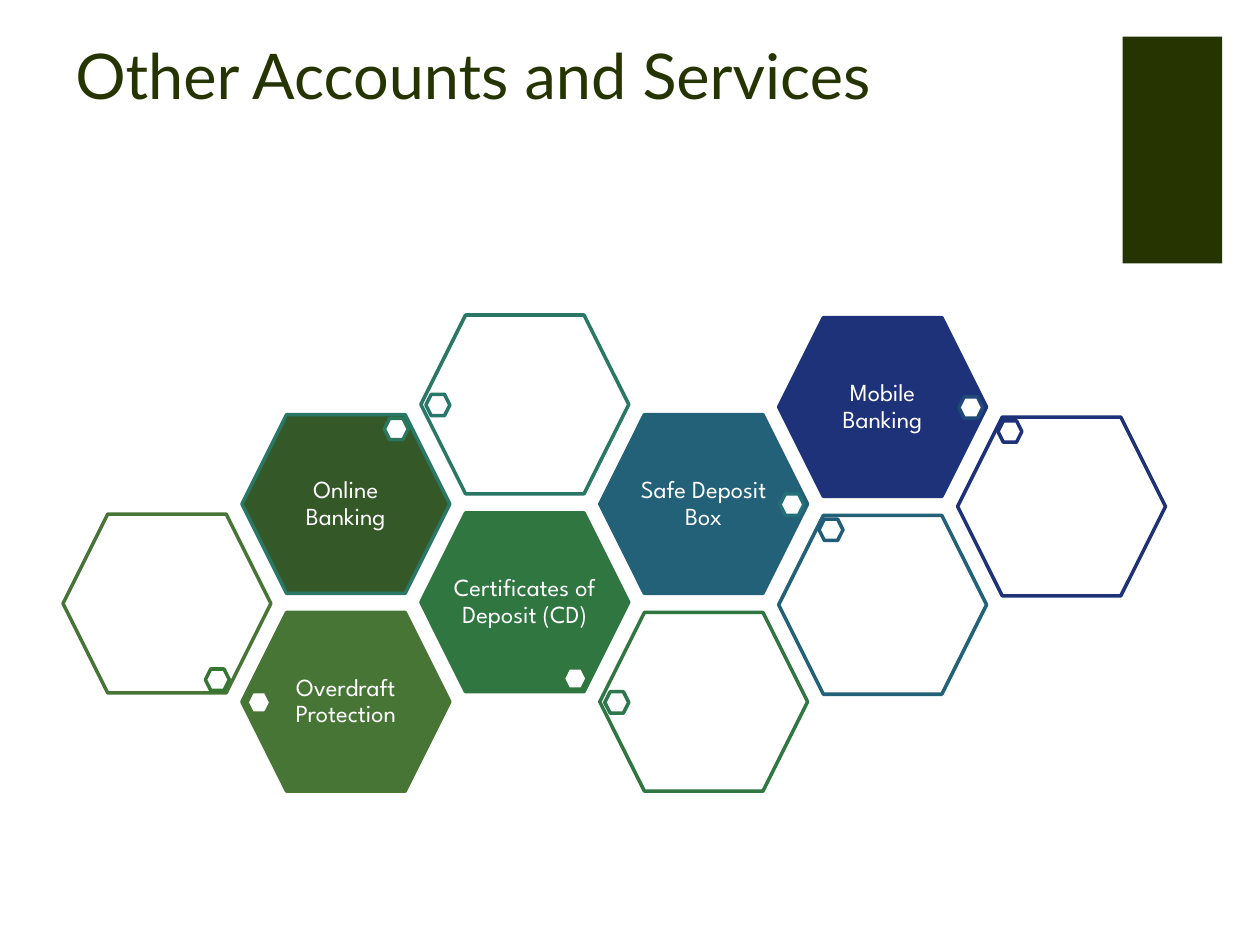
from pptx import Presentation
from pptx.dml.color import RGBColor
from pptx.enum.shapes import MSO_SHAPE
from pptx.enum.text import MSO_ANCHOR, PP_ALIGN
from pptx.oxml.xmlchemy import OxmlElement
from pptx.util import Inches, Pt

RECTANGLE, HEXAGON = MSO_SHAPE.RECTANGLE, MSO_SHAPE.HEXAGON
BOTTOM, MIDDLE = MSO_ANCHOR.BOTTOM, MSO_ANCHOR.MIDDLE
CENTER = PP_ALIGN.CENTER

WHITE = RGBColor(0xFF, 0xFF, 0xFF)
DARK_OLIVE = RGBColor(0x26, 0x34, 0x01)
OLIVE = RGBColor(0x46, 0x75, 0x36)
GREEN = RGBColor(0x2F, 0x76, 0x41)
FOREST = RGBColor(0x34, 0x58, 0x28)
TEAL = RGBColor(0x29, 0x77, 0x64)
BLUE = RGBColor(0x23, 0x61, 0x78)
NAVY = RGBColor(0x1D, 0x32, 0x78)
MOSS_DOT = RGBColor(0x35, 0x76, 0x33)
GREEN_DOT = RGBColor(0x30, 0x76, 0x3E)
JADE_DOT = RGBColor(0x2D, 0x77, 0x4C)
SEA_DOT = RGBColor(0x2A, 0x77, 0x5C)
TEAL_DOT = RGBColor(0x27, 0x77, 0x6D)
CYAN_DOT = RGBColor(0x25, 0x70, 0x78)
BLUE_DOT = RGBColor(0x22, 0x5C, 0x78)
INDIGO_DOT = RGBColor(0x20, 0x48, 0x78)

TITLE = "Other Accounts and Services"
CELL_WIDTH, CELL_HEIGHT = 1.65, 1.42
DOT_WIDTH, DOT_HEIGHT = 0.19, 0.17
GRID_LEFT, COLUMN_STEP, ROW_STEP = 0.5, 1.42, 1.57
COLUMN_TOPS = [4.08, 3.29, 2.5, 3.29, 2.52, 3.31]
DOT_OFFSETS = {
    "left": (0.04, 0.63),
    "right": (1.43, 0.63),
    "upper left": (0.32, 0.03),
    "upper right": (1.13, 0.03),
    "lower right": (1.13, 1.23),
}

# column, row, label, fill, line, dot corner, dot line
CELLS = [
    (1, 1, "Overdraft Protection", OLIVE, OLIVE, "left", OLIVE),
    (0, 0, None, WHITE, OLIVE, "lower right", MOSS_DOT),
    (2, 1, "Certificates of Deposit (CD)", GREEN, GREEN, "lower right", GREEN_DOT),
    (3, 1, None, WHITE, GREEN, "left", JADE_DOT),
    (1, 0, "Online Banking", FOREST, TEAL, "upper right", SEA_DOT),
    (2, 0, None, WHITE, TEAL, "left", TEAL_DOT),
    (3, 0, "Safe Deposit Box", BLUE, BLUE, "right", CYAN_DOT),
    (4, 1, None, WHITE, BLUE, "upper left", BLUE_DOT),
    (4, 0, "Mobile Banking", NAVY, NAVY, "right", INDIGO_DOT),
    (5, 0, None, WHITE, NAVY, "upper left", NAVY),
]


def add_filled(page, kind, left, top, width, height, fill):
    shape = page.shapes.add_shape(
        kind, Inches(left), Inches(top), Inches(width), Inches(height))
    shape.shadow.inherit = False
    shape.fill.solid()
    shape.fill.fore_color.rgb = fill
    shape.line.fill.background()
    return shape


def add_hexagon(page, left, top, width, height, fill, line):
    hexagon = add_filled(page, HEXAGON, left, top, width, height, fill)
    hexagon.adjustments[0] = 0.25
    hexagon.line.color.rgb = line
    hexagon.line.width = Pt(2)
    return hexagon


def make_translucent(shape, percent):
    alpha = OxmlElement("a:alpha")
    alpha.set("val", str(percent * 1000))
    shape.fill._xPr.find(".//{*}solidFill/{*}srgbClr").append(alpha)


def style_text(frame, font_name, size, color):
    font = frame.paragraphs[0].runs[0].font
    font.name, font.size = font_name, Pt(size)
    font.color.rgb = color


def add_label(hexagon, label):
    frame = hexagon.text_frame
    frame.word_wrap = True
    frame.vertical_anchor = MIDDLE
    frame.margin_left = frame.margin_right = 0
    frame.margin_top = frame.margin_bottom = Inches(0.02)
    frame.text = label
    para = frame.paragraphs[0]
    para.alignment = CENTER
    para.line_spacing = 0.9
    style_text(frame, "League Spartan", 14, WHITE)


def add_title(page):
    box = page.shapes.add_textbox(
        Inches(0.5), Inches(0.31), Inches(7.12), Inches(0.63))
    frame = box.text_frame
    frame.word_wrap = True
    frame.vertical_anchor = BOTTOM
    frame.text = TITLE
    style_text(frame, "Lato", 36, DARK_OLIVE)


def add_cell(page, column, row, label, fill, line, corner, dot_line):
    left = GRID_LEFT + column * COLUMN_STEP
    top = COLUMN_TOPS[column] + row * ROW_STEP
    hexagon = add_hexagon(page, left, top, CELL_WIDTH, CELL_HEIGHT, fill, line)
    if label:
        add_label(hexagon, label)
    else:
        make_translucent(hexagon, 90)
    across, down = DOT_OFFSETS[corner]
    add_hexagon(page, left + across, top + down,
                DOT_WIDTH, DOT_HEIGHT, WHITE, dot_line)


def main():
    deck = Presentation()
    deck.slide_width, deck.slide_height = Inches(10), Inches(7.5)
    page = deck.slides.add_slide(deck.slide_layouts[6])
    add_filled(page, RECTANGLE, 8.91, 0.29, 0.79, 1.8, DARK_OLIVE)
    add_title(page)
    for cell in CELLS:
        add_cell(page, *cell)
    deck.save("out.pptx")


if __name__ == "__main__":
    main()
